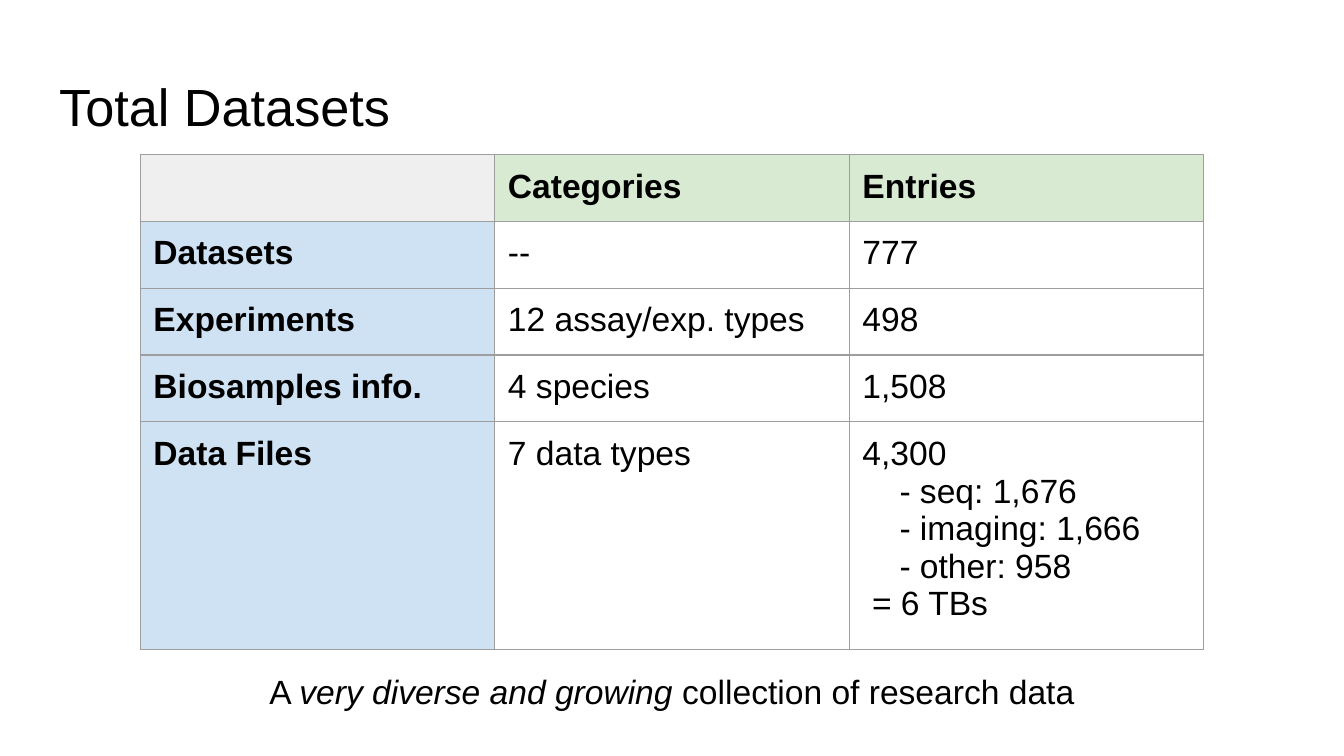
import dataclasses

import lxml.etree
import pptx
import pptx.dml.color
import pptx.enum.text
import pptx.oxml.ns
import pptx.util

Cm = pptx.util.Cm
Pt = pptx.util.Pt
RGB = pptx.dml.color.RGBColor.from_string
qn = pptx.oxml.ns.qn


@dataclasses.dataclass(frozen=True)
class Theme:
    font: str = "Arial"
    title_size: int = 28
    body_size: int = 18
    text: str = "000000"
    background: str = "FFFFFF"
    border: str = "9E9E9E"
    border_width: float = 0.75
    corner: str = "EFEFEF"
    header: str = "D9EAD3"
    label: str = "CFE2F3"


THEME = Theme()
INSET = Cm(0.25)

# Each cell is a list of (text, left indent in cm) paragraphs, or plain text
ROWS = [
    ["", "Categories", "Entries"],
    ["Datasets", "--", "777"],
    ["Experiments", "12 assay/exp. types", "498"],
    ["Biosamples info.", "4 species", "1,508"],
    ["Data Files", "7 data types", [
        ("4,300", 0),
        ("- seq: 1,676", 0.7),
        ("- imaging: 1,666", 0.7),
        ("- other: 958", 0.7),
        ("= 6 TBs", 0.18),
    ]],
]


def set_all(obj, values):
    for name, value in values.items():
        setattr(obj, name, value)


def add_run(p, text, size, **style):
    r = p.add_run()
    r.text = text
    set_all(r.font, {"name": THEME.font, "size": Pt(size), **style})
    r.font.color.rgb = RGB(THEME.text)


def add_text(s, box, runs, size, align):
    sp = s.shapes.add_textbox(*(Cm(v) for v in box))
    tf = sp.text_frame
    set_all(tf, {
        "word_wrap": True,
        "margin_left": INSET, "margin_right": INSET,
        "margin_top": INSET, "margin_bottom": INSET,
        "vertical_anchor": pptx.enum.text.MSO_ANCHOR.BOTTOM,
    })
    p = tf.paragraphs[0]
    p.alignment = align
    for text, style in runs:
        add_run(p, text, size, **style)


def add_borders(cell):
    tcPr = cell._tc.get_or_add_tcPr()
    for i, side in enumerate(("a:lnL", "a:lnR", "a:lnT", "a:lnB")):
        ln = lxml.etree.Element(qn(side), w=str(Pt(THEME.border_width)))
        fill = lxml.etree.SubElement(ln, qn("a:solidFill"))
        lxml.etree.SubElement(fill, qn("a:srgbClr"), val=THEME.border)
        tcPr.insert(i, ln)  # lines come before the fill


def fill_cell(cell, content, color, bold):
    set_all(cell, {
        "margin_left": INSET, "margin_right": INSET,
        "margin_top": INSET, "margin_bottom": INSET,
    })
    if color:
        cell.fill.solid()
        cell.fill.fore_color.rgb = RGB(color)
    else:
        cell.fill.background()
    add_borders(cell)

    tf = cell.text_frame
    lines = [(content, 0)] if isinstance(content, str) else content
    for i, (text, indent) in enumerate(lines):
        p = tf.paragraphs[0] if i == 0 else tf.add_paragraph()
        if indent:
            p._p.get_or_add_pPr().set("marL", str(Cm(indent)))
        if text:
            add_run(p, text, THEME.body_size, bold=bold)


def cell_color(row, col):
    if row == 0:
        return THEME.header if col else THEME.corner
    return None if col else THEME.label


def add_data_table(s, left, top, col_width, row_heights):
    n_cols = len(ROWS[0])
    frame = s.shapes.add_table(len(ROWS), n_cols, Cm(left), Cm(top),
                               Cm(col_width * n_cols), Cm(sum(row_heights)))
    table = frame.table
    set_all(table, {"first_row": False, "horz_banding": False})
    for column in table.columns:
        column.width = Cm(col_width)
    for i, (row, height) in enumerate(zip(ROWS, row_heights)):
        table.rows[i].height = Cm(height)
        for j, content in enumerate(row):
            fill_cell(table.cell(i, j), content, cell_color(i, j),
                      bold=i == 0 or j == 0)


def main():
    prs = pptx.Presentation()
    set_all(prs, {"slide_width": Cm(25.4), "slide_height": Cm(14.29)})
    s = prs.slides.add_slide(prs.slide_layouts[6])
    s.background.fill.solid()
    s.background.fill.fore_color.rgb = RGB(THEME.background)
    align = pptx.enum.text.PP_ALIGN

    # Title
    add_text(s, (0.87, 1.24, 23.67, 1.6), [("Total Datasets", {})],
             THEME.title_size, align.LEFT)

    # Dataset counts
    add_data_table(s, 2.65, 2.92, 6.7, [1.22] * 4 + [4.08])

    # Closing line
    add_text(s, (0, 12.4, 25.4, 1.3), [
        ("A ", {}),
        ("very diverse and growing", {"italic": True}),
        (" collection of research data", {}),
    ], THEME.body_size, align.CENTER)

    prs.save("out.pptx")


if __name__ == "__main__":
    main()
